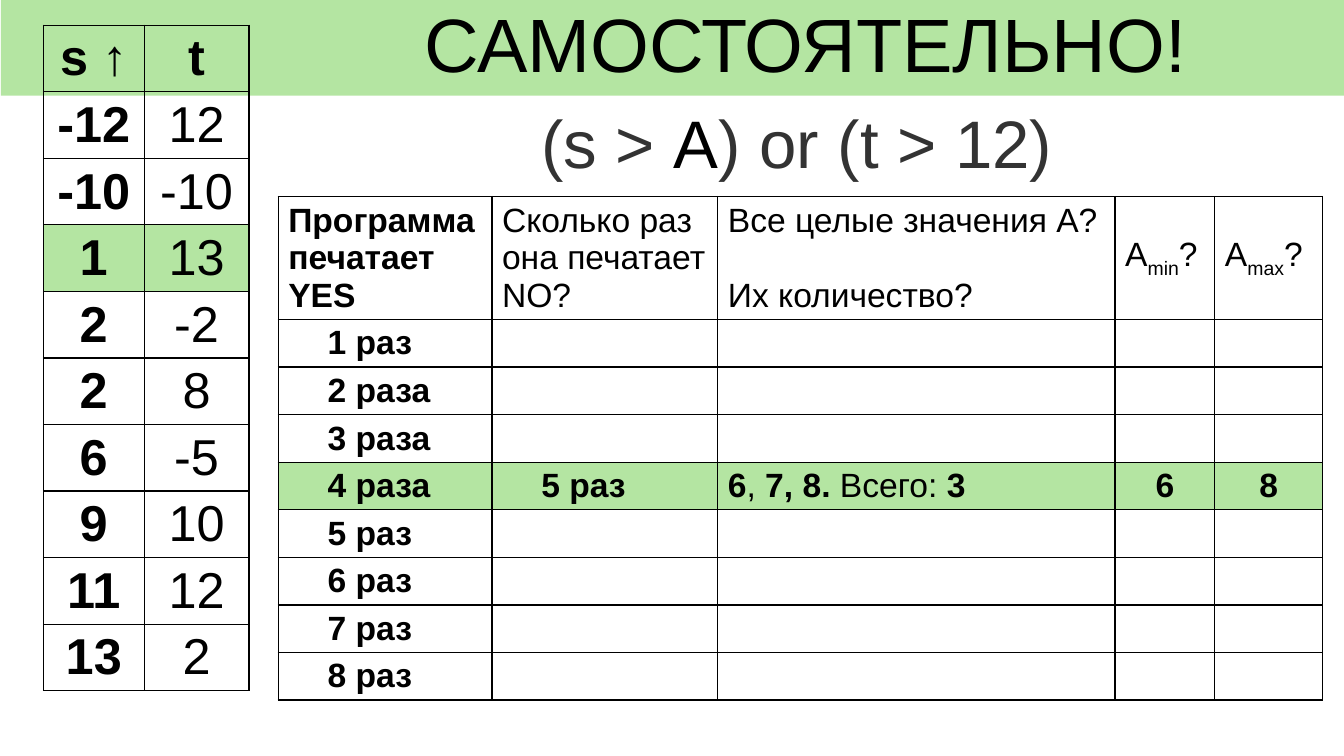
"""Build the slide with a sorted data table and an exercise table to fill in."""
from pptx import Presentation
from pptx.dml.color import RGBColor
from pptx.enum.text import MSO_ANCHOR as Anchor, MSO_AUTO_SIZE as AutoSize, PP_ALIGN as Align
from pptx.oxml.ns import qn
from pptx.util import Emu, Pt
from lxml.etree import SubElement

BLACK = RGBColor(0x00, 0x00, 0x00)
GREY = RGBColor(0x33, 0x33, 0x33)
GREEN = RGBColor(0xB4, 0xE5, 0xA2)

EMU_PER_PX = 9144
INDENT = 39

PAIRS = [
    ("s ↑", "t"), ("-12", "12"), ("-10", "-10"), ("1", "13"), ("2", "-2"),
    ("2", "8"), ("6", "-5"), ("9", "10"), ("11", "12"), ("13", "2"),
]
MARKED_PAIR = 3

COUNTS = ["1 раз", "2 раза", "3 раза", "4 раза", "5 раз", "6 раз", "7 раз", "8 раз"]
SOLVED_ROW = 4


def px(length):
    return Emu(length * EMU_PER_PX)


class SlideBuilder:
    font = "Arial"

    def __init__(self, presentation):
        self.slide = presentation.slides.add_slide(presentation.slide_layouts[5])

    def add_runs(self, paragraph, pieces, size, align=Align.LEFT, indent=0):
        paragraph.alignment = align
        if indent:
            properties = paragraph._p.get_or_add_pPr()
            properties.set("marL", str(px(indent)))
            properties.set("indent", "0")
        for text, style in pieces:
            run = paragraph.add_run()
            run.text = text
            font = run.font
            font.name = self.font
            font.size = Pt(size)
            font.bold = style.get("bold", False)
            font.color.rgb = style.get("colour", BLACK)
            if "baseline" in style:
                font._element.set("baseline", str(style["baseline"]))

    def place(self, shape, left, top, width, height):
        shape.left, shape.top = px(left), px(top)
        shape.width, shape.height = px(width), px(height)

    def title(self, text, box, size, indent):
        shape = self.slide.shapes.title
        self.place(shape, *box)
        shape.fill.solid()
        shape.fill.fore_color.rgb = GREEN
        frame = shape.text_frame
        frame.auto_size = AutoSize.NONE
        frame.vertical_anchor = Anchor.MIDDLE
        paragraph = frame.paragraphs[0]
        paragraph.line_spacing = 0.9
        self.add_runs(paragraph, [(text, {})], size, Align.CENTER, indent)

    def text(self, pieces, box, size, space_after):
        frame = self.slide.shapes.add_textbox(*map(px, box)).text_frame
        frame.word_wrap = True
        frame.auto_size = AutoSize.SHAPE_TO_FIT_TEXT
        frame.vertical_anchor = Anchor.MIDDLE
        paragraph = frame.paragraphs[0]
        paragraph.space_after = Pt(space_after)
        self.add_runs(paragraph, pieces, size, Align.CENTER)

    def table(self, left, top, columns, rows, marked_row):
        table = self.slide.shapes.add_table(
            len(rows), len(columns), px(left), px(top), px(sum(columns)), px(sum(rows))
        ).table
        table.first_row = table.horz_banding = False
        for column, width in zip(table.columns, columns):
            column.width = px(width)
        for index, (row, height) in enumerate(zip(table.rows, rows)):
            row.height = px(height)
            for cell in row.cells:
                self.border(cell)
                if index == marked_row:
                    cell.fill.solid()
                    cell.fill.fore_color.rgb = GREEN
                else:
                    cell.fill.background()
        return table

    def border(self, cell):
        properties = cell._tc.get_or_add_tcPr()
        for side in ("a:lnL", "a:lnR", "a:lnT", "a:lnB"):
            line = SubElement(properties, qn(side), w=str(Pt(1)))
            fill = SubElement(line, qn("a:solidFill"))
            SubElement(fill, qn("a:srgbClr"), val=str(BLACK))

    def cell(self, cell, lines, size, align=Align.LEFT, indent=0, anchor=Anchor.TOP, gap=0):
        cell.vertical_anchor = anchor
        frame = cell.text_frame
        for index, pieces in enumerate(lines):
            paragraph = frame.add_paragraph() if index else frame.paragraphs[0]
            if index:
                paragraph.space_before = Pt(gap)
            self.add_runs(paragraph, pieces, size, align, indent)


def add_pairs(builder):
    table = builder.table(43, 25, [100, 104], [63] * len(PAIRS), MARKED_PAIR)
    for row, pair in enumerate(PAIRS):
        for column, value in enumerate(pair):
            style = {"bold": row == 0 or column == 0}
            builder.cell(table.cell(row, column), [[(value, style)]], 36,
                         Align.CENTER, anchor=Anchor.MIDDLE)


def add_exercise(builder):
    plain, bold, subscript = {}, {"bold": True}, {"baseline": -25000}
    headers = [
        [[("Программа печатает YES", bold)]],
        [[("Сколько раз она печатает NO?", plain)]],
        [[("Все целые значения А?", plain)], [("Их количество?", plain)]],
    ]
    headers += [[[("А", plain), (name, subscript), ("?", plain)]] for name in ("min", "max")]
    answer = [("6", bold), (", ", plain), ("7, 8. ", bold), ("Всего: ", plain), ("3", bold)]

    table = builder.table(276, 195, [212, 224, 394, 99, 107],
                          [109] + [41] * len(COUNTS), SOLVED_ROW)
    for column, lines in enumerate(headers):
        builder.cell(table.cell(0, column), lines, 24, anchor=Anchor.MIDDLE, gap=27)
    for row, count in enumerate(COUNTS, 1):
        builder.cell(table.cell(row, 0), [[(count, bold)]], 24, indent=INDENT)
    builder.cell(table.cell(SOLVED_ROW, 1), [[("5 раз", bold)]], 24, indent=INDENT)
    builder.cell(table.cell(SOLVED_ROW, 2), [answer], 24)
    for column, limit in ((3, "6"), (4, "8")):
        builder.cell(table.cell(SOLVED_ROW, column), [[(limit, bold)]], 24, Align.CENTER)


def main():
    presentation = Presentation()
    presentation.slide_width, presentation.slide_height = px(1333), px(750)
    builder = SlideBuilder(presentation)
    builder.title("САМОСТОЯТЕЛЬНО!", (1, 0, 1332, 95), 54, 264)
    add_pairs(builder)
    add_exercise(builder)
    condition = [("(s > ", {"colour": GREY}), ("A", {}), (") or (t > 12)", {"colour": GREY})]
    builder.text(condition, (456, 95, 669, 91), 48, 12)
    presentation.save("out.pptx")


if __name__ == "__main__":
    main()
